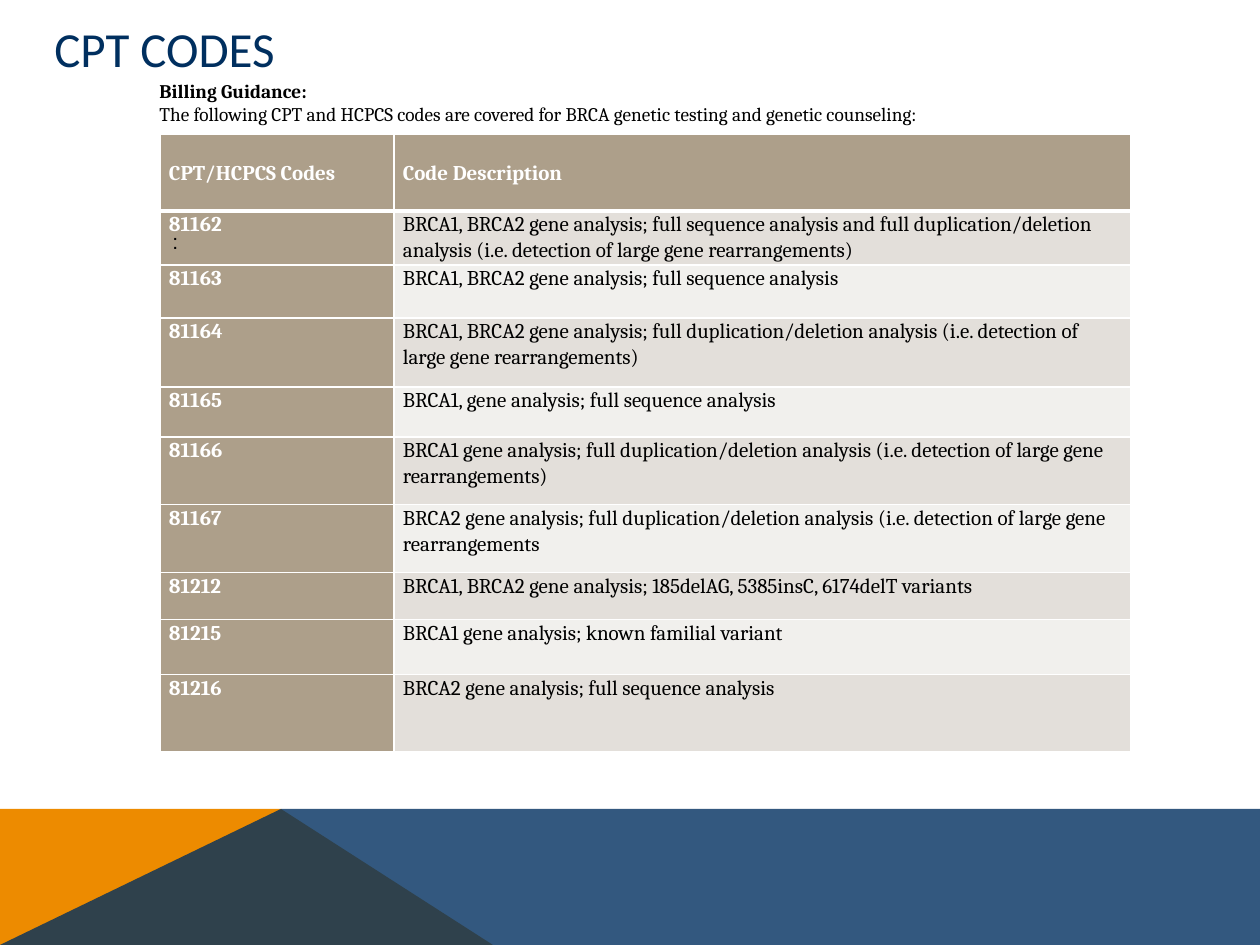
import lxml.etree
import pptx
import pptx.dml.color
import pptx.enum.text
import pptx.oxml.ns
import pptx.util

PX = 914400 / 126  # EMU in one pixel

THEME = {
    "navy": "002F5F", "orange": "ED8B00", "black": "000000", "white": "FFFFFF",
    "tan": "AD9F8A", "bands": ("E3DFDA", "F1F0ED"),
    "title_size": 28, "table_size": 12, "guidance_size": 11,
    "title_font": "Calibri", "body_font": "Cambria", "mark_font": "Arial",
}
MIDDLE = pptx.enum.text.MSO_ANCHOR.MIDDLE


def px(*lengths):
    return [pptx.util.Emu(round(length * PX)) for length in lengths]


def style(paragraph, font, size, color, bold=False):
    for run in paragraph.runs:
        run.font.name = font
        run.font.size = pptx.util.Pt(size)
        run.font.bold = bold
        run.font.color.rgb = pptx.dml.color.RGBColor.from_string(color)


presentation = pptx.Presentation()
presentation.slide_width, presentation.slide_height = px(1260, 945)
slide = presentation.slides.add_slide(presentation.slide_layouts[6])

# Footer band: orange wedge under a translucent navy shape
bands = [
    ([(0, 945), (0, 809), (281, 809), (493, 945)], THEME["orange"], 100),
    ([(0, 945), (281, 809), (1260, 809), (1260, 945)], THEME["navy"], 80),
]
for points, color, opacity in bands:
    builder = slide.shapes.build_freeform(*points[0], scale=PX)
    builder.add_line_segments(points[1:], close=True)
    shape = builder.convert_to_shape()
    shape.shadow.inherit = False
    shape.line.fill.background()
    shape.fill.solid()
    shape.fill.fore_color.rgb = pptx.dml.color.RGBColor.from_string(color)
    if opacity < 100:
        color_element = shape.element.spPr.find(".//" + pptx.oxml.ns.qn("a:srgbClr"))
        lxml.etree.SubElement(color_element, pptx.oxml.ns.qn("a:alpha"), val=str(opacity * 1000))

# Title
title = slide.shapes.add_textbox(*px(42, 21, 1089, 53))
title.text_frame.word_wrap = True
title.text_frame.vertical_anchor = MIDDLE
title.text_frame.text = "CPT CODES"
style(title.text_frame.paragraphs[0], THEME["title_font"], THEME["title_size"], THEME["navy"])

# Code table
rows = [
    (77, "CPT/HCPCS Codes", "Code Description"),
    (53, "81162", "BRCA1, BRCA2 gene analysis; full sequence analysis and full duplication/deletion analysis (i.e. detection of large gene rearrangements)"),
    (53, "81163", "BRCA1, BRCA2 gene analysis; full sequence analysis"),
    (69, "81164", "BRCA1, BRCA2 gene analysis; full duplication/deletion analysis (i.e. detection of large gene rearrangements)"),
    (50, "81165", "BRCA1, gene analysis; full sequence analysis"),
    (68, "81166", "BRCA1 gene analysis; full duplication/deletion analysis (i.e. detection of large gene rearrangements)"),
    (68, "81167", "BRCA2 gene analysis; full duplication/deletion analysis (i.e. detection of large gene rearrangements"),
    (47, "81212", "BRCA1, BRCA2 gene analysis; 185delAG, 5385insC, 6174delT variants"),
    (55, "81215", "BRCA1 gene analysis; known familial variant"),
    (77, "81216", "BRCA2 gene analysis; full sequence analysis"),
]
table_height = sum(height for height, *_ in rows)
table = slide.shapes.add_table(len(rows), 2, *px(160, 134, 971, table_height)).table
table.columns[0].width, table.columns[1].width = px(234, 737)

for row_index, (height, *texts) in enumerate(rows):
    table.rows[row_index].height = px(height)[0]
    for column_index, text in enumerate(texts):
        cell = table.cell(row_index, column_index)
        is_heading = row_index == 0 or column_index == 0
        cell.margin_left, cell.margin_right, cell.margin_top, cell.margin_bottom = px(9, 9, 0, 0)
        if row_index == 0:
            cell.vertical_anchor = MIDDLE
        cell.text_frame.text = text
        paragraph = cell.text_frame.paragraphs[0]
        paragraph.line_spacing = 1.07
        style(paragraph, THEME["body_font"], THEME["table_size"],
              THEME["white"] if is_heading else THEME["black"], is_heading)

        # White borders, thick between the header and the first code
        properties = cell._tc.get_or_add_tcPr()
        for side in "LRTB":
            thick = (row_index, side) in ((0, "B"), (1, "T"))
            border = lxml.etree.SubElement(properties, pptx.oxml.ns.qn("a:ln" + side),
                                           w=str(pptx.util.Pt(3 if thick else 1)))
            border_fill = lxml.etree.SubElement(border, pptx.oxml.ns.qn("a:solidFill"))
            lxml.etree.SubElement(border_fill, pptx.oxml.ns.qn("a:srgbClr"), val=THEME["white"])
        fill_color = THEME["tan"] if is_heading else THEME["bands"][(row_index - 1) % 2]
        cell.fill.solid()
        cell.fill.fore_color.rgb = pptx.dml.color.RGBColor.from_string(fill_color)

# Colon mark over the first code
mark = slide.shapes.add_textbox(*px(160, 222, 31, 38))
mark.text_frame.word_wrap = False
mark.text_frame.vertical_anchor = MIDDLE
mark.text_frame.text = ":"
style(mark.text_frame.paragraphs[0], THEME["mark_font"], THEME["table_size"], THEME["black"])

# Billing guidance above the table
guidance = slide.shapes.add_textbox(*px(147, 73, 903, 59))
guidance.text_frame.word_wrap = True
guidance.text_frame.text = (
    "Billing Guidance:\n"
    "The following CPT and HCPCS codes are covered for BRCA genetic testing and genetic counseling:"
)
for paragraph, bold in zip(guidance.text_frame.paragraphs, (True, False)):
    style(paragraph, THEME["body_font"], THEME["guidance_size"], THEME["black"], bold)

presentation.save("out.pptx")
